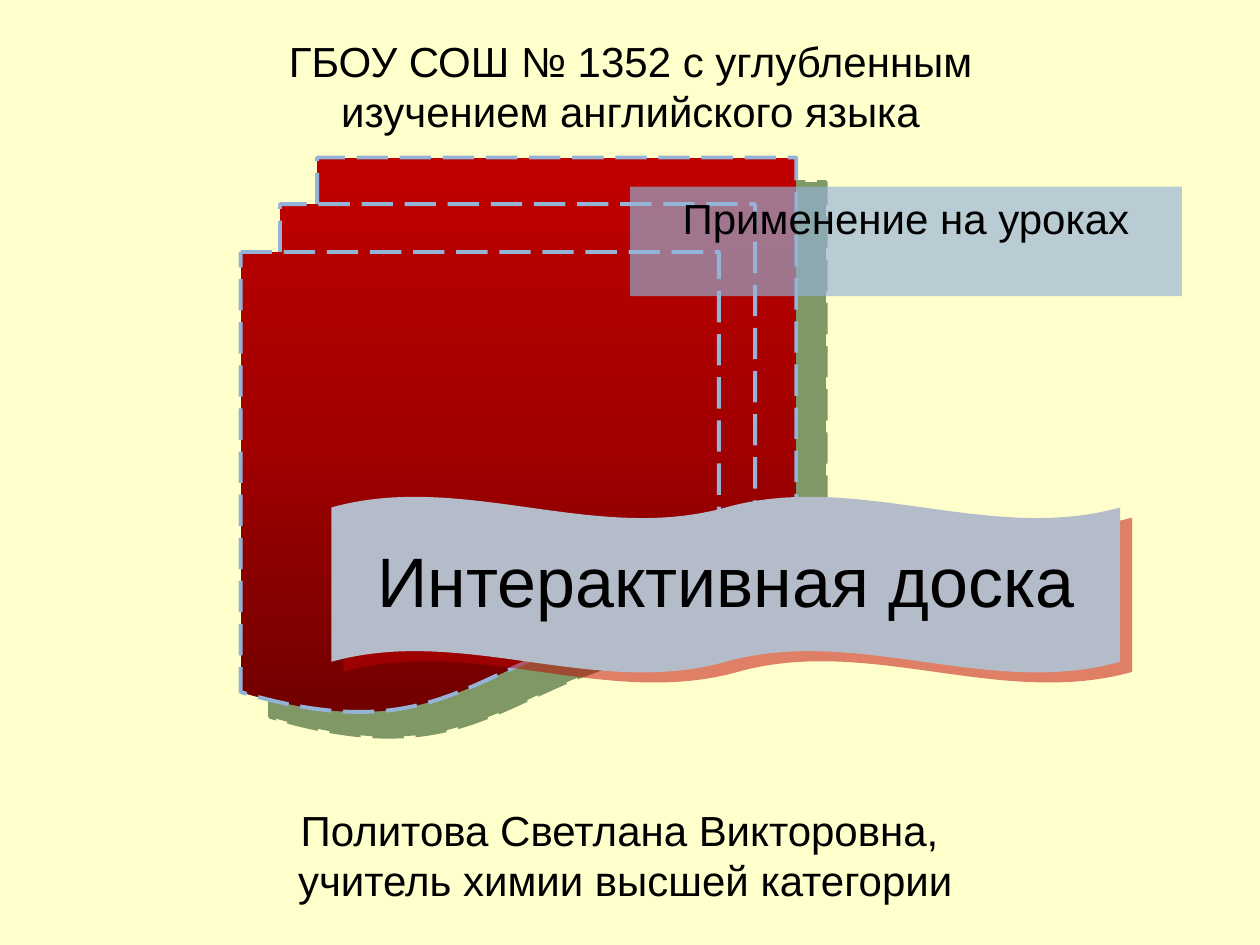
from copy import deepcopy
from lxml import etree
from pptx import Presentation
from pptx import util as u
from pptx.dml.color import RGBColor
from pptx.enum import dml, shapes, text
from pptx.oxml import ns

COLORS = {
    "background": "FFFFCC", "text": "000000", "wave": "B4BCCA", "blue": "95B3D7",
    "dark": "720000", "middle": "A20000", "red": "C00000", "green": "003300",
}
SHAPE = shapes.MSO_SHAPE
ANCHOR = text.MSO_ANCHOR
FONT = "Arial"
SCHOOL = ["ГБОУ СОШ № 1352 с углубленным изучением английского языка"]
TITLE = ["Интерактивная доска"]
AUTHOR = ["Политова Светлана Викторовна, ", "учитель химии высшей категории"]
SUBJECT = ["Применение на уроках"]
DOCUMENT_STOPS = [(0, "dark"), (0.5, "middle"), (1, "red")]
DOCUMENT_BOX = (137.5, 90, 317.5, 317.5)
WAVE_BOX = (189.4, 283.7, 450.7, 100.8)
SCHOOL_BOX = (132.5, 16.6, 455.8, 65.5)
AUTHOR_BOX = (18.7, 450, 683.3, 71.3)
SUBJECT_BOX = (360, 106.6, 315.4, 62.6)


def rgb(name):
    return RGBColor.from_string(COLORS[name])


def add_shape(parent, kind, box, fill=None, opacity=None):
    shape = parent.add_shape(kind, *map(u.Pt, box))
    shape.shadow.inherit = False
    shape.line.fill.background()
    if fill is None:
        shape.fill.background()
        return shape
    shape.fill.solid()
    shape.fill.fore_color.rgb = rgb(fill)
    if opacity:
        color = shape._element.spPr.find(ns.qn("a:solidFill"))[0]
        etree.SubElement(color, ns.qn("a:alpha"), val=str(opacity * 1000))
    return shape


def add_shadow(shape, color, distance, angle=40, opacity=50):
    effects = shape._element.spPr.find(ns.qn("a:effectLst"))
    shadow = etree.SubElement(
        effects, ns.qn("a:outerShdw"), blurRad="0", dist=str(u.Pt(distance)),
        dir=str(angle * 60000), algn="ctr", rotWithShape="0")
    tint = etree.SubElement(shadow, ns.qn("a:srgbClr"), val=COLORS[color])
    etree.SubElement(tint, ns.qn("a:alpha"), val=str(opacity * 1000))


def fill_gradient(shape, stops, angle):
    shape.fill.gradient()
    stop_list = shape._element.spPr.find(ns.qn("a:gradFill")).find(ns.qn("a:gsLst"))
    while len(stop_list) < len(stops):
        stop_list.append(deepcopy(stop_list[0]))
    for stop, (position, color) in zip(shape.fill.gradient_stops, stops):
        stop.position = position
        stop.color.rgb = rgb(color)
    shape.fill.gradient_angle = angle


def write(shape, lines, size=24, anchor=ANCHOR.TOP):
    frame = shape.text_frame
    frame.word_wrap = True
    frame.vertical_anchor = anchor
    for index, line in enumerate(lines):
        paragraph = frame.add_paragraph() if index else frame.paragraphs[0]
        paragraph.alignment = text.PP_ALIGN.CENTER
        run = paragraph.add_run()
        run.text = line
        run.font.size = u.Pt(size)
        run.font.name = FONT
        run.font.color.rgb = rgb("text")


def main():
    presentation = Presentation()
    presentation.slide_width, presentation.slide_height = u.Pt(720), u.Pt(540)
    slide = presentation.slides.add_slide(presentation.slide_layouts[6])
    slide.background.fill.solid()
    slide.background.fill.fore_color.rgb = rgb("background")

    emblem = slide.shapes.add_group_shape().shapes
    documents = add_shape(emblem, SHAPE.FLOWCHART_MULTIDOCUMENT, DOCUMENT_BOX)
    fill_gradient(documents, DOCUMENT_STOPS, 90)
    documents.line.color.rgb = rgb("blue")
    documents.line.width = u.Pt(2.25)
    documents.line.dash_style = dml.MSO_LINE.LONG_DASH
    add_shadow(documents, "green", 22)

    wave = add_shape(emblem, SHAPE.DOUBLE_WAVE, WAVE_BOX, "wave")
    add_shadow(wave, "red", 9)
    write(wave, TITLE, 40, ANCHOR.MIDDLE)
    wave.text_frame.paragraphs[0].line_spacing = 0.9

    school = slide.shapes.add_textbox(*map(u.Pt, SCHOOL_BOX))
    write(school, SCHOOL)
    write(add_shape(slide.shapes, SHAPE.SNIP_1_RECTANGLE, AUTHOR_BOX), AUTHOR)
    subject = add_shape(slide.shapes, SHAPE.RECTANGLE, SUBJECT_BOX, "blue", 66)
    write(subject, SUBJECT)

    presentation.save("out.pptx")


if __name__ == "__main__":
    main()
